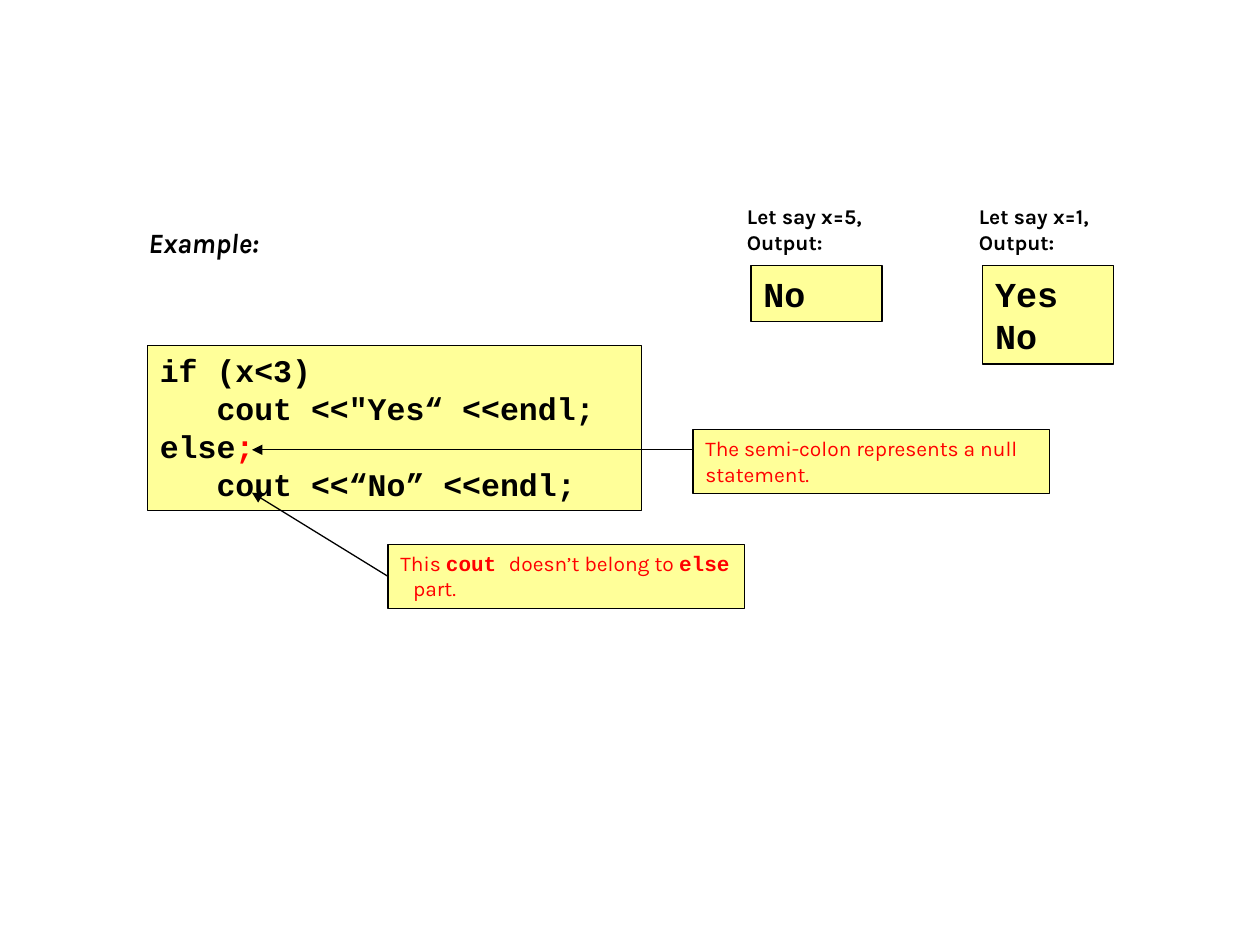
"""Build a slide on how a stray semicolon after else changes the output."""
import pptx
import pptx.dml.color
import pptx.enum.shapes
import pptx.enum.text
import pptx.oxml
import pptx.oxml.ns
import pptx.util
from pptx.util import Inches

THEME = {
    "black": pptx.dml.color.RGBColor.from_string("000000"),
    "red": pptx.dml.color.RGBColor.from_string("FF0000"),
    "yellow": pptx.dml.color.RGBColor.from_string("FFFF99"),
    "prose": "Karla",
    "code": "Courier New",
    "note_size": pptx.util.Pt(12),
    "heading_size": pptx.util.Pt(16),
    "code_size": pptx.util.Pt(18),
    "output_size": pptx.util.Pt(20),
    "line": pptx.util.Pt(0.75),
}


def add_box(page, left, top, width, height, lines, font, size, color="black", bold=True, filled=True):
    """Add a text box or a filled rectangle holding one paragraph per line."""
    area = [Inches(length) for length in (left, top, width, height)]
    if filled:
        box = page.shapes.add_shape(pptx.enum.shapes.MSO_SHAPE.RECTANGLE, *area)
        box.shadow.inherit = False
        box.fill.solid()
        box.fill.fore_color.rgb = THEME["yellow"]
        box.line.color.rgb = THEME["black"]
        box.line.width = THEME["line"]
    else:
        box = page.shapes.add_textbox(*area)
    frame = box.text_frame
    frame.word_wrap = filled
    frame.auto_size = pptx.enum.text.MSO_AUTO_SIZE.SHAPE_TO_FIT_TEXT
    frame.vertical_anchor = pptx.enum.text.MSO_ANCHOR.TOP
    frame.text = "\n".join(lines)
    for para in frame.paragraphs:
        para.alignment = pptx.enum.text.PP_ALIGN.LEFT
        para.font.name = THEME[font]
        para.font.size = THEME[size]
        para.font.color.rgb = THEME[color]
        para.font.bold = bold
    return box


def add_arrow(page, start, end):
    """Add a thin black line with a triangle at its end."""
    points = [Inches(length) for length in (*start, *end)]
    arrow = page.shapes.add_connector(pptx.enum.shapes.MSO_CONNECTOR.STRAIGHT, *points)
    arrow.line.color.rgb = THEME["black"]
    arrow.line.width = THEME["line"]
    outline = arrow.line._get_or_add_ln()
    pptx.oxml.ns.qn("a:tailEnd")
    outline.append(pptx.oxml.parse_xml(
        f'<a:tailEnd {pptx.oxml.ns.nsdecls("a")} type="triangle"/>'))
    arrow._element.spPr.append(pptx.oxml.parse_xml(
        f'<a:effectLst {pptx.oxml.ns.nsdecls("a")}/>'))
    return arrow


deck = pptx.Presentation()
deck.slide_width = Inches(10)
deck.slide_height = Inches(7.5)
page = deck.slides.add_slide(deck.slide_layouts[6])

heading = add_box(page, 1.08, 1.74, 1.19, 0.37, ["Example:"], "prose", "heading_size", filled=False)
heading.text_frame.paragraphs[0].font.italic = True

code_lines = ["if (x<3)", "   cout <<\"Yes“ <<endl;", "else", "   cout <<“No” <<endl;"]
code = add_box(page, 1.17, 2.74, 3.92, 1.31, code_lines, "code", "code_size")
semicolon = code.text_frame.paragraphs[2].add_run()
semicolon.text = ";"
semicolon.font.color.rgb = THEME["red"]

add_box(page, 5.5, 3.41, 2.83, 0.51, ["The semi-colon represents a null statement."],
        "prose", "note_size", "red", bold=False)
add_arrow(page, (5.5, 3.57), (2, 3.57))

cout_note = add_box(page, 3.08, 4.32, 2.83, 0.51, [""], "prose", "note_size", "red", bold=False)
para = cout_note.text_frame.paragraphs[0]
properties = para._p.get_or_add_pPr()
properties.set("marL", str(Inches(0.1)))
properties.set("indent", str(Inches(-0.1)))
for text, is_code in [("This ", False), ("cout ", True), ("doesn’t belong to ", False),
                      ("else ", True), ("part.", False)]:
    span = para.add_run()
    span.text = text
    if is_code:
        span.font.name = THEME["code"]
        span.font.bold = True
cout_arrow = add_arrow(page, (3.08, 4.57), (2, 3.91))
cout_arrow.begin_connect(cout_note, 1)

for value, left, output, height in [(5, 5.83, ["No"], 0.44), (1, 7.67, ["Yes", "No"], 0.78)]:
    add_box(page, left, 1.57, 1.15, 0.5, [f"Let say x={value},", "Output:"],
            "prose", "note_size", filled=False)
    add_box(page, left + 0.13, 2.11, 1.04, height, output, "code", "output_size")

deck.save("out.pptx")
